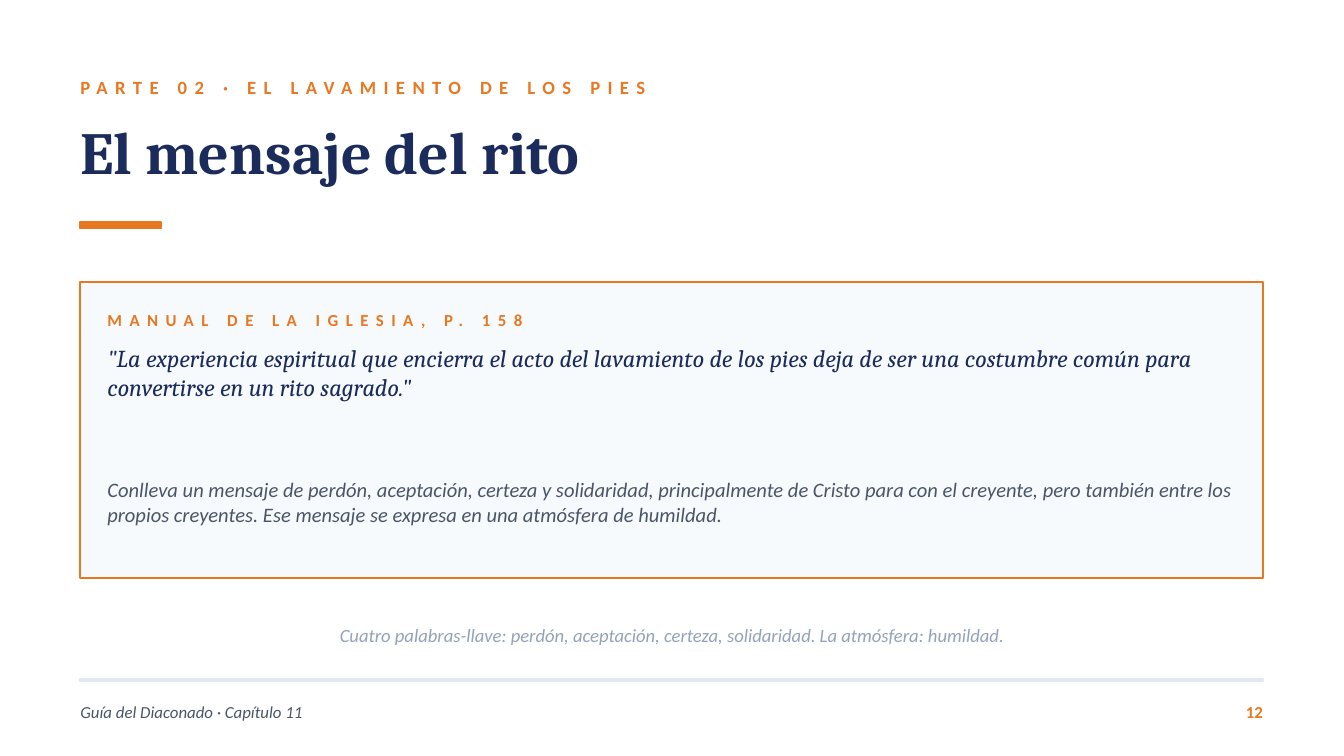
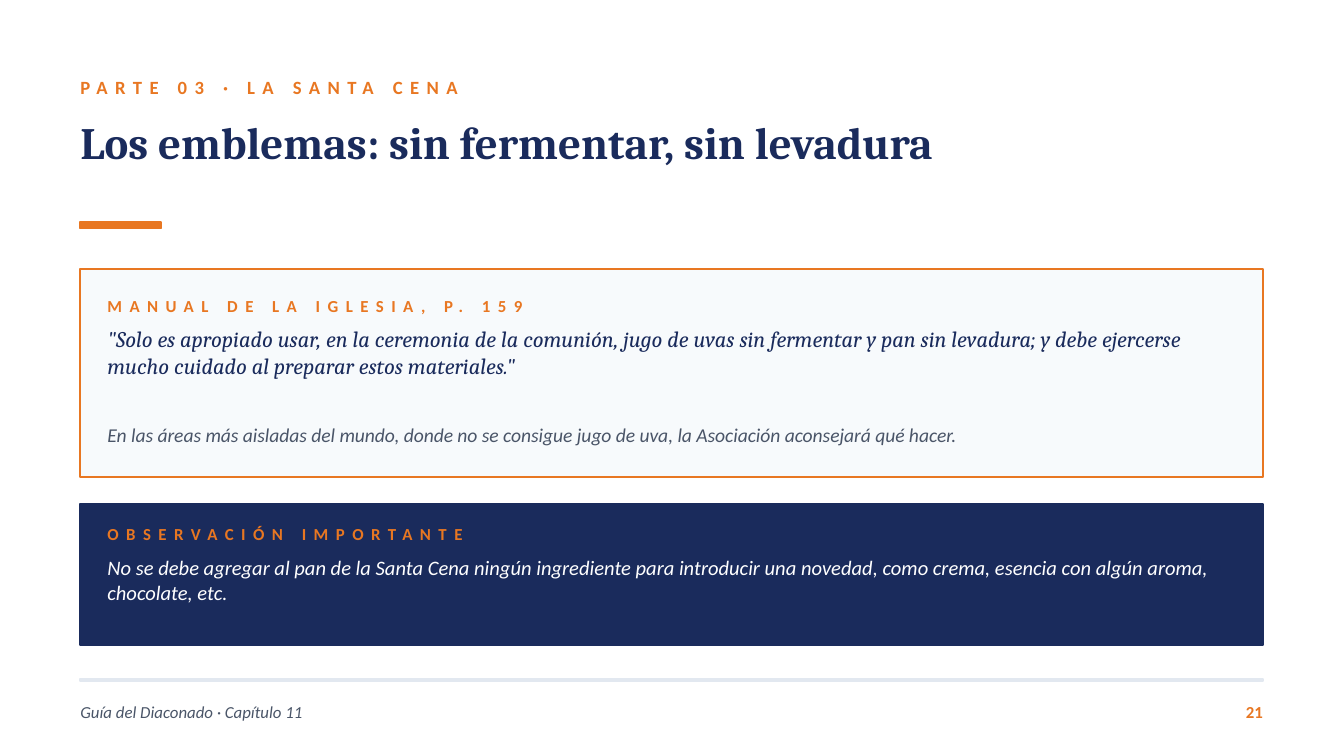
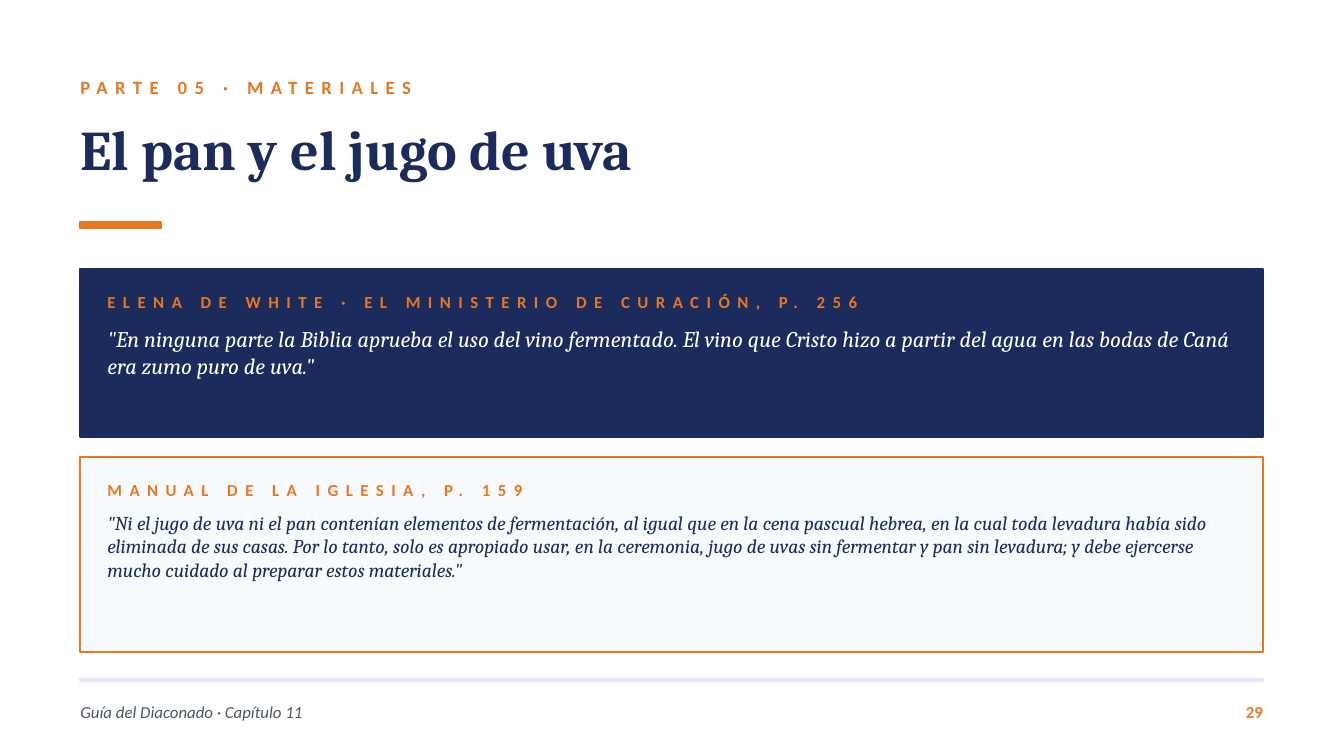
import pptx
import pptx.dml.color
import pptx.enum.shapes
import pptx.enum.text
import pptx.util
from pptx.util import Cm

COLOURS = {
    "orange": "E87722",
    "navy": "1A2B5C",
    "pale": "F7FAFC",
    "slate": "4A5568",
    "muted": "94A3B8",
    "rule": "E2E8F0",
    "white": "FFFFFF",
}
HEADING_FONT = "Cambria"
BODY_FONT = "Calibri"
ALIGN = pptx.enum.text.PP_ALIGN
ANCHOR = pptx.enum.text.MSO_ANCHOR

# Shared measures in centimetres
MARGIN = 1.52
CONTENT_WIDTH = 22.35
PANEL_INSET = 0.51
TEXT_LEFT = MARGIN + PANEL_INSET
TEXT_WIDTH = CONTENT_WIDTH - 2 * PANEL_INSET
LABEL_HEIGHT = 0.64

# Panel fill and outline colours
PANEL_STYLES = {"light": ("pale", "orange"), "dark": ("navy", "navy")}

# Each panel text: top, height, font, size, colour, wording
SLIDES = [
    {
        "number": "12",
        "section": "PARTE 02 · EL LAVAMIENTO DE LOS PIES",
        "title": "El mensaje del rito",
        "title_size": 32,
        "panels": [
            {
                "style": "light", "top": 5.33, "height": 5.59,
                "label": "MANUAL DE LA IGLESIA, P. 158",
                "label_top": 5.72, "label_width": 15.24,
                "texts": [
                    (6.48, 2.41, HEADING_FONT, 13, "navy",
                     '"La experiencia espiritual que encierra el acto del lavamiento de los pies '
                     'deja de ser una costumbre común para convertirse en un rito sagrado."'),
                    (9.02, 1.78, BODY_FONT, 11, "slate",
                     "Conlleva un mensaje de perdón, aceptación, certeza y solidaridad, "
                     "principalmente de Cristo para con el creyente, pero también entre los "
                     "propios creyentes. Ese mensaje se expresa en una atmósfera de humildad."),
                ],
            },
        ],
        "closing": "Cuatro palabras-llave: perdón, aceptación, certeza, solidaridad. "
                   "La atmósfera: humildad.",
    },
    {
        "number": "21",
        "section": "PARTE 03 · LA SANTA CENA",
        "title": "Los emblemas: sin fermentar, sin levadura",
        "title_size": 24,
        "panels": [
            {
                "style": "light", "top": 5.08, "height": 3.94,
                "label": "MANUAL DE LA IGLESIA, P. 159",
                "label_top": 5.46, "label_width": 15.24,
                "texts": [
                    (6.15, 1.78, HEADING_FONT, 12, "navy",
                     '"Solo es apropiado usar, en la ceremonia de la comunión, jugo de uvas sin '
                     'fermentar y pan sin levadura; y debe ejercerse mucho cuidado al preparar '
                     'estos materiales."'),
                    (8, 1.02, BODY_FONT, 10.5, "slate",
                     "En las áreas más aisladas del mundo, donde no se consigue jugo de uva, "
                     "la Asociación aconsejará qué hacer."),
                ],
            },
            {
                "style": "dark", "top": 9.53, "height": 2.67,
                "label": "OBSERVACIÓN IMPORTANTE",
                "label_top": 9.78, "label_width": 15.24,
                "texts": [
                    (10.49, 1.52, BODY_FONT, 11, "white",
                     "No se debe agregar al pan de la Santa Cena ningún ingrediente para "
                     "introducir una novedad, como crema, esencia con algún aroma, "
                     "chocolate, etc."),
                ],
            },
        ],
    },
    {
        "number": "29",
        "section": "PARTE 05 · MATERIALES",
        "title": "El pan y el jugo de uva",
        "title_size": 30,
        "panels": [
            {
                "style": "dark", "top": 5.08, "height": 3.18,
                "label": "ELENA DE WHITE · EL MINISTERIO DE CURACIÓN, P. 256",
                "label_top": 5.38, "label_width": 17.78,
                "texts": [
                    (6.15, 2.03, HEADING_FONT, 12, "white",
                     '"En ninguna parte la Biblia aprueba el uso del vino fermentado. El vino que '
                     'Cristo hizo a partir del agua en las bodas de Caná era zumo puro de uva."'),
                ],
            },
            {
                "style": "light", "top": 8.64, "height": 3.68,
                "label": "MANUAL DE LA IGLESIA, P. 159",
                "label_top": 8.94, "label_width": 15.24,
                "texts": [
                    (9.65, 2.54, HEADING_FONT, 10.5, "navy",
                     '"Ni el jugo de uva ni el pan contenían elementos de fermentación, al igual '
                     'que en la cena pascual hebrea, en la cual toda levadura había sido eliminada '
                     'de sus casas. Por lo tanto, solo es apropiado usar, en la ceremonia, jugo de '
                     'uvas sin fermentar y pan sin levadura; y debe ejercerse mucho cuidado al '
                     'preparar estos materiales."'),
                ],
            },
        ],
    },
]


def add_text(slide, text, left, top, width, height, size, colour, font=BODY_FONT,
             bold=False, italic=False, spacing=0, align=ALIGN.LEFT,
             anchor=ANCHOR.MIDDLE, shape=None):
    """Write one run in a new text box, or in the placeholder given as shape."""
    box = (Cm(left), Cm(top), Cm(width), Cm(height))
    if shape is None:
        shape = slide.shapes.add_textbox(*box)
    shape.left, shape.top, shape.width, shape.height = box
    frame = shape.text_frame
    frame.word_wrap = True
    frame.auto_size = pptx.enum.text.MSO_AUTO_SIZE.NONE
    frame.vertical_anchor = anchor
    frame.margin_left = frame.margin_right = frame.margin_top = frame.margin_bottom = 0
    paragraph = frame.paragraphs[0]
    paragraph.alignment = align
    run = paragraph.add_run()
    run.text = text
    run.font.name = font
    run.font.size = pptx.util.Pt(size)
    run.font.bold = bold
    run.font.italic = italic
    run.font.color.rgb = pptx.dml.color.RGBColor.from_string(COLOURS[colour])
    if spacing:
        run.font._element.set("spc", str(spacing * 100))


def add_rectangle(slide, left, top, width, height, fill, line):
    shape = slide.shapes.add_shape(pptx.enum.shapes.MSO_SHAPE.RECTANGLE,
                                   Cm(left), Cm(top), Cm(width), Cm(height))
    shape.shadow.inherit = False
    shape.fill.solid()
    shape.fill.fore_color.rgb = pptx.dml.color.RGBColor.from_string(COLOURS[fill])
    shape.line.color.rgb = pptx.dml.color.RGBColor.from_string(COLOURS[line])
    shape.line.width = pptx.util.Pt(1)


presentation = pptx.Presentation()
presentation.slide_width = Cm(25.4)
presentation.slide_height = Cm(14.29)
title_only_layout = presentation.slide_layouts[5]

for content in SLIDES:
    slide = presentation.slides.add_slide(title_only_layout)

    # Section line, title and accent bar
    add_text(slide, content["section"], MARGIN, 1.27, 17.78, 0.76, 10, "orange",
             bold=True, spacing=4)
    add_text(slide, content["title"], MARGIN, 2.16, 22.86, 1.78, content["title_size"],
             "navy", HEADING_FONT, bold=True, anchor=ANCHOR.TOP, shape=slide.shapes.title)
    add_rectangle(slide, MARGIN, 4.19, 1.52, 0.13, "orange", "orange")

    # Quotation panels
    for panel in content["panels"]:
        add_rectangle(slide, MARGIN, panel["top"], CONTENT_WIDTH, panel["height"],
                      *PANEL_STYLES[panel["style"]])
        add_text(slide, panel["label"], TEXT_LEFT, panel["label_top"], panel["label_width"],
                 LABEL_HEIGHT, 9, "orange", bold=True, spacing=4)
        for top, height, font, size, colour, wording in panel["texts"]:
            add_text(slide, wording, TEXT_LEFT, top, TEXT_WIDTH, height, size, colour, font,
                     italic=True, anchor=ANCHOR.TOP)

    # Closing remark
    if "closing" in content:
        add_text(slide, content["closing"], MARGIN, 11.56, CONTENT_WIDTH, 0.89, 10, "muted",
                 italic=True, align=ALIGN.CENTER)

    # Footer
    add_rectangle(slide, MARGIN, 12.83, CONTENT_WIDTH, 0.05, "rule", "rule")
    add_text(slide, "Guía del Diaconado · Capítulo 11", MARGIN, 13.08, 15.24, 0.76, 9,
             "slate", italic=True)
    add_text(slide, content["number"], 22.6, 13.08, 1.27, 0.76, 9, "orange",
             bold=True, align=ALIGN.RIGHT)

presentation.save("out.pptx")
